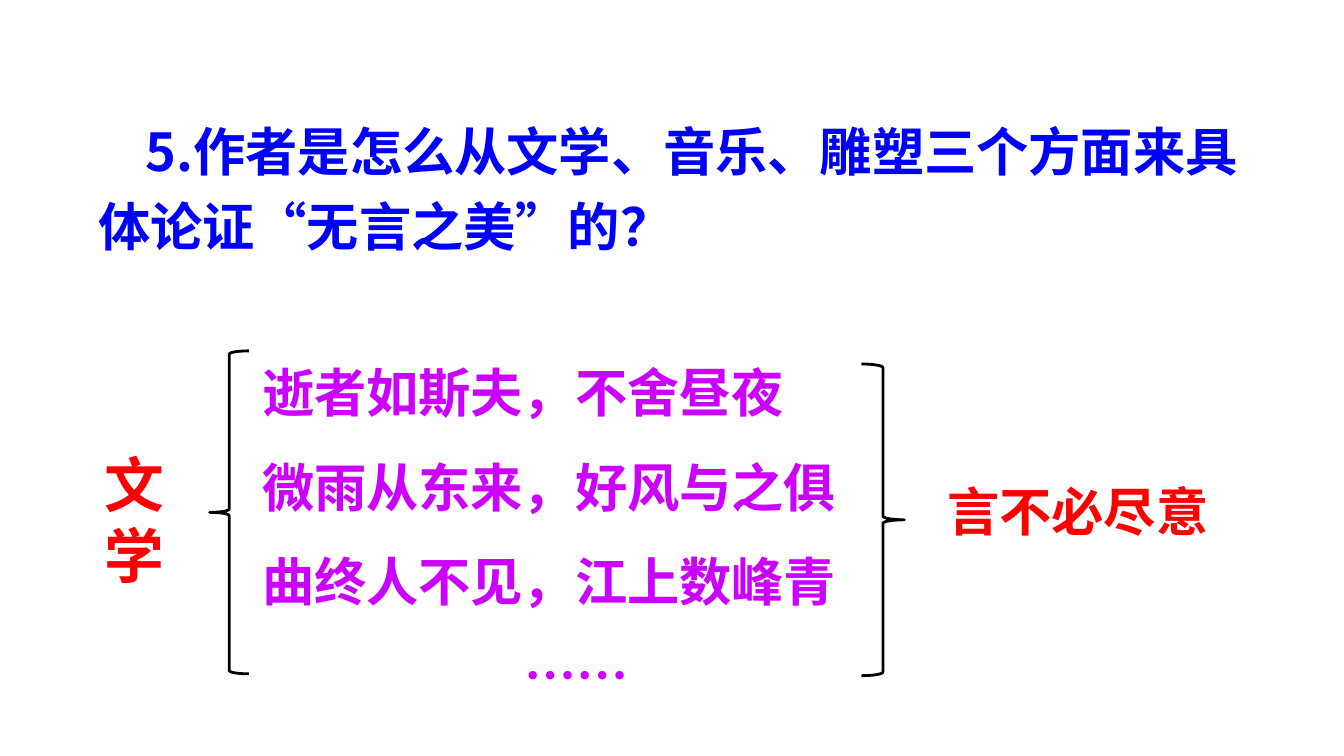
"""Build the slide that argues the beauty of the unsaid from literature."""
from dataclasses import dataclass

import lxml.etree
import pptx
import pptx.dml.color
import pptx.enum.shapes
import pptx.enum.text
import pptx.oxml.ns
import pptx.util

FONT = "Noto Sans CJK SC"
BLUE, RED, PURPLE, BLACK = "0000FF", "FF0000", "CC00FF", "000000"
Pt = pptx.util.Pt
qn = pptx.oxml.ns.qn
ALIGN = pptx.enum.text.PP_ALIGN
SHAPE = pptx.enum.shapes.MSO_SHAPE


@dataclass(frozen=True)
class Box:
    """A rectangle in points."""
    left: float
    top: float
    width: float
    height: float

    def lengths(self) -> list:
        """Return left, top, width and height as lengths."""
        return [Pt(v) for v in (self.left, self.top, self.width, self.height)]


@dataclass(frozen=True)
class Brace:
    """A curly brace and its place."""
    kind: int
    box: Box


BRACES = [
    Brace(SHAPE.LEFT_BRACE, Box(112.3, 188, 21, 173)),
    Brace(SHAPE.RIGHT_BRACE, Box(461.5, 195, 23, 167)),
]
LINES = ["逝者如斯夫，不舍昼夜", "微雨从东来，好风与之俱", "曲终人不见，江上数峰青"]


def rgb(value: str) -> pptx.dml.color.RGBColor:
    """Turn a hex string into a colour."""
    return pptx.dml.color.RGBColor.from_string(value)


def place(sp, box: Box):
    """Move a shape and prepare its text frame."""
    sp.left, sp.top, sp.width, sp.height = box.lengths()
    tf = sp.text_frame
    tf.word_wrap = True
    tf.auto_size = pptx.enum.text.MSO_AUTO_SIZE.NONE
    tf.vertical_anchor = pptx.enum.text.MSO_ANCHOR.TOP
    return tf


def write(p, text: str, *, color: str, size: float = 28, align=ALIGN.LEFT,
          line: float = 1, indent: float = 0, spacing: float = 0) -> None:
    """Write one formatted, unbulleted paragraph."""
    p.alignment, p.line_spacing, p.space_before = align, line, Pt(0)
    pPr = p._p.get_or_add_pPr()
    pPr.set("marL", "0")
    pPr.set("indent", str(Pt(indent)))
    lxml.etree.SubElement(pPr, qn("a:buNone"))
    r = p.add_run()
    r.text = text
    r.font.name, r.font.size, r.font.bold = FONT, Pt(size), True
    r.font.color.rgb = rgb(color)
    rPr = r._r.get_or_add_rPr()
    rPr.set("lang", "zh-CN")
    if spacing:
        rPr.set("spc", str(round(spacing * 100)))
    lxml.etree.SubElement(rPr, qn("a:ea")).set("typeface", FONT)


def add_label(s, box: Box, text: str, vertical: bool = False, **fmt) -> None:
    """Add a text box holding one label."""
    tf = place(s.shapes.add_textbox(*box.lengths()), box)
    if vertical:
        tf._txBody.bodyPr.set("vert", "eaVert")
    write(tf.paragraphs[0], text, **fmt)


def add_brace(s, brace: Brace) -> None:
    """Draw one outlined brace."""
    sp = s.shapes.add_shape(brace.kind, *brace.box.lengths())
    sp.shadow.inherit = False
    sp.fill.background()
    sp.line.color.rgb = rgb(BLACK)
    sp.line.width = Pt(1.5)


def main() -> None:
    """Build and save the slide."""
    prs = pptx.Presentation()
    prs.slide_width, prs.slide_height = Pt(720), Pt(405)
    s = prs.slides.add_slide(prs.slide_layouts[1])

    tf = place(s.shapes.title, Box(45.4, 53.3, 629.3, 88.6))
    write(tf.paragraphs[0], "5.作者是怎么从文学、音乐、雕塑三个方面来具体论证“无言之美”的？",
          color=BLUE, line=1.2, indent=25.5)

    tf = place(s.placeholders[1], Box(133.2, 172.8, 351.4, 211))
    for i, text in enumerate(LINES + ["……"]):
        p = tf.add_paragraph() if i else tf.paragraphs[0]
        write(p, text, color=PURPLE, line=1.5,
              align=ALIGN.LEFT if i < len(LINES) else ALIGN.CENTER)

    add_label(s, Box(40.3, 236.9, 53.3, 97.9), "文学", vertical=True,
              color=RED, size=32, spacing=6)
    add_label(s, Box(500.4, 253.4, 187.9, 41), "言不必尽意", color=RED)
    for brace in BRACES:
        add_brace(s, brace)
    prs.save("out.pptx")


if __name__ == "__main__":
    main()
